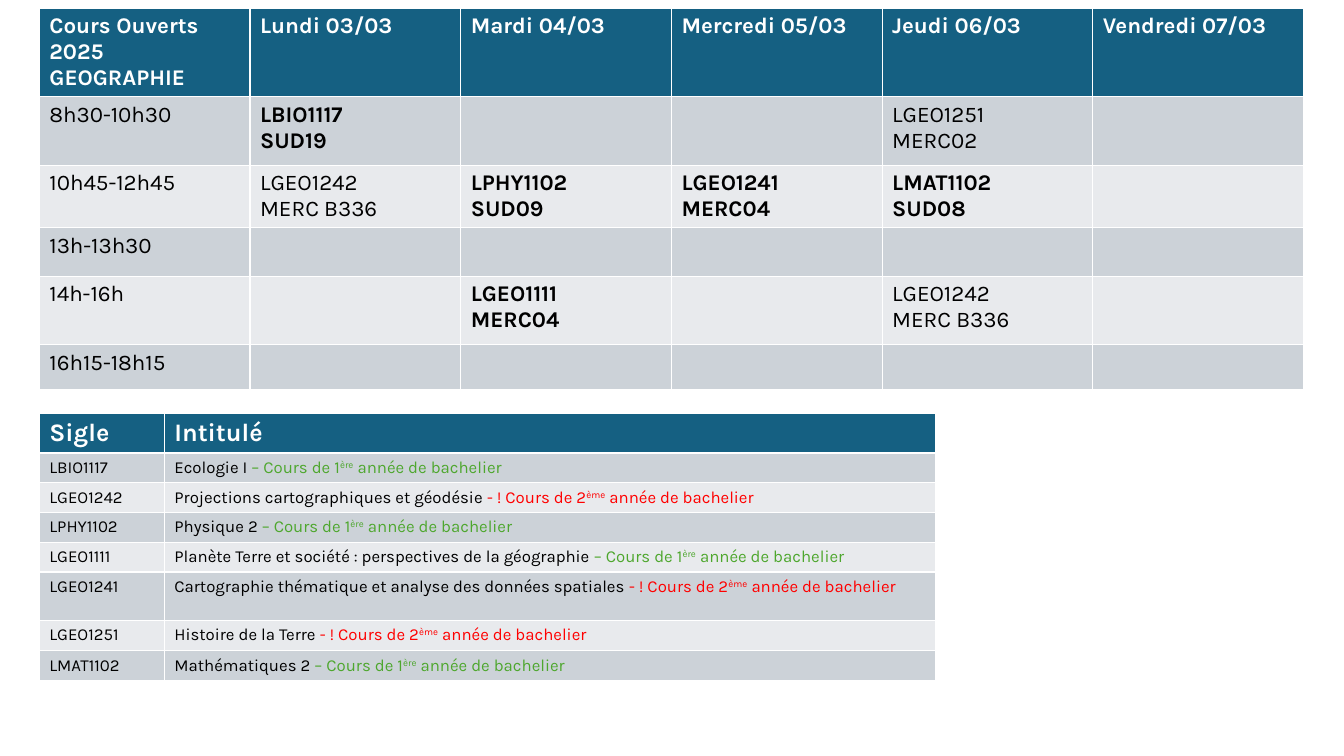
from dataclasses import dataclass

from pptx import Presentation
from pptx.dml.color import RGBColor
from pptx.util import Inches, Pt

FONT = "Karla"
WHITE, BLACK = "FFFFFF", "000000"
HEADER_BLUE = "156082"
BANDS = ("CCD2D8", "E8EAED")
GREEN, RED = "4EA72E", "FF0000"
SUPERSCRIPT = "30000"
LEFT = 0.39


@dataclass(frozen=True)
class Year:
    prefix: str
    ordinal: str
    color: str


@dataclass(frozen=True)
class Course:
    code: str
    title: str
    year: Year


@dataclass(frozen=True)
class Session:
    slot: int
    day: int
    code: str
    room: str
    bold: bool


FIRST_YEAR = Year("– Cours de 1", "ère", GREEN)
SECOND_YEAR = Year("- ! Cours de 2", "ème", RED)

DAYS = ["Lundi 03/03", "Mardi 04/03", "Mercredi 05/03", "Jeudi 06/03", "Vendredi 07/03"]
SLOTS = ["8h30-10h30", "10h45-12h45", "13h-13h30", "14h-16h", "16h15-18h15"]
SESSIONS = [
    Session(1, 1, "LBIO1117", "SUD19", True),
    Session(1, 4, "LGEO1251", "MERC02", False),
    Session(2, 1, "LGEO1242", "MERC B336", False),
    Session(2, 2, "LPHY1102", "SUD09", True),
    Session(2, 3, "LGEO1241", "MERC04", True),
    Session(2, 4, "LMAT1102", "SUD08", True),
    Session(4, 2, "LGEO1111", "MERC04", True),
    Session(4, 4, "LGEO1242", "MERC B336", False),
]
COURSES = [
    Course("LBIO1117", "Ecologie I", FIRST_YEAR),
    Course("LGEO1242", "Projections cartographiques et géodésie", SECOND_YEAR),
    Course("LPHY1102", "Physique 2", FIRST_YEAR),
    Course("LGEO1111", "Planète Terre et société : perspectives de la géographie", FIRST_YEAR),
    Course("LGEO1241", "Cartographie thématique et analyse des données spatiales", SECOND_YEAR),
    Course("LGEO1251", "Histoire de la Terre", SECOND_YEAR),
    Course("LMAT1102", "Mathématiques 2", FIRST_YEAR),
]


def rgb(color: str) -> RGBColor:
    return RGBColor.from_string(color)


def set_font(paragraph, size: float, color: str, bold: bool) -> None:
    font = paragraph.font
    font.name, font.size, font.bold = FONT, Pt(size), bold
    font.color.rgb = rgb(color)


def add_grid(slide, top: float, widths: list[float], heights: list[float],
             header_size: float, body_size: float):
    grid = slide.shapes.add_table(
        len(heights), len(widths), Inches(LEFT), Inches(top),
        Inches(sum(widths)), Inches(sum(heights))).table
    for column, width in zip(grid.columns, widths):
        column.width = Inches(width)
    for index, (row, height) in enumerate(zip(grid.rows, heights)):
        row.height = Inches(height)
        header = index == 0
        for cell in row.cells:
            cell.fill.solid()
            cell.fill.fore_color.rgb = rgb(HEADER_BLUE if header else BANDS[(index - 1) % 2])
            set_font(cell.text_frame.paragraphs[0], header_size if header else body_size,
                     WHITE if header else BLACK, header)
    return grid


def write(cell, text: str):
    paragraph = cell.text_frame.paragraphs[0]
    paragraph.add_run().text = text
    return paragraph


def add_schedule(slide) -> None:
    grid = add_grid(slide, 0.08, [2.09] * 6, [0.8, 0.68, 0.52, 0.48, 0.68, 0.45], 16, 16)
    corner = grid.cell(0, 0)
    write(corner, "Cours Ouverts 2025")
    subject = corner.text_frame.add_paragraph()
    subject.text = "GEOGRAPHIE"
    set_font(subject, 16, WHITE, True)
    for column, day in enumerate(DAYS, 1):
        write(grid.cell(0, column), day)
    for row, slot in enumerate(SLOTS, 1):
        write(grid.cell(row, 0), slot)
    for session in SESSIONS:
        paragraph = write(grid.cell(session.slot, session.day), session.code)
        paragraph.add_line_break()
        paragraph.add_run().text = session.room
        paragraph.font.bold = session.bold


def add_year(paragraph, year: Year) -> None:
    for text in (year.prefix, year.ordinal, " année de bachelier"):
        run = paragraph.add_run()
        run.text = text
        run.font.color.rgb = rgb(year.color)
        if text == year.ordinal:
            run._r.get_or_add_rPr().set("baseline", SUPERSCRIPT)


def add_course_list(slide) -> None:
    heights = [0.39, 0.29, 0.29, 0.29, 0.29, 0.48, 0.3, 0.23]
    grid = add_grid(slide, 4.1, [1.24, 7.65], heights, 18, 12)
    write(grid.cell(0, 0), "Sigle")
    write(grid.cell(0, 1), "Intitulé")
    for row, course in enumerate(COURSES, 1):
        write(grid.cell(row, 0), course.code)
        add_year(write(grid.cell(row, 1), course.title + " "), course.year)


def main() -> None:
    presentation = Presentation()
    presentation.slide_width, presentation.slide_height = Inches(13.33), Inches(7.5)
    slide = presentation.slides.add_slide(presentation.slide_layouts[6])
    add_schedule(slide)
    add_course_list(slide)
    presentation.save("out.pptx")


if __name__ == "__main__":
    main()
